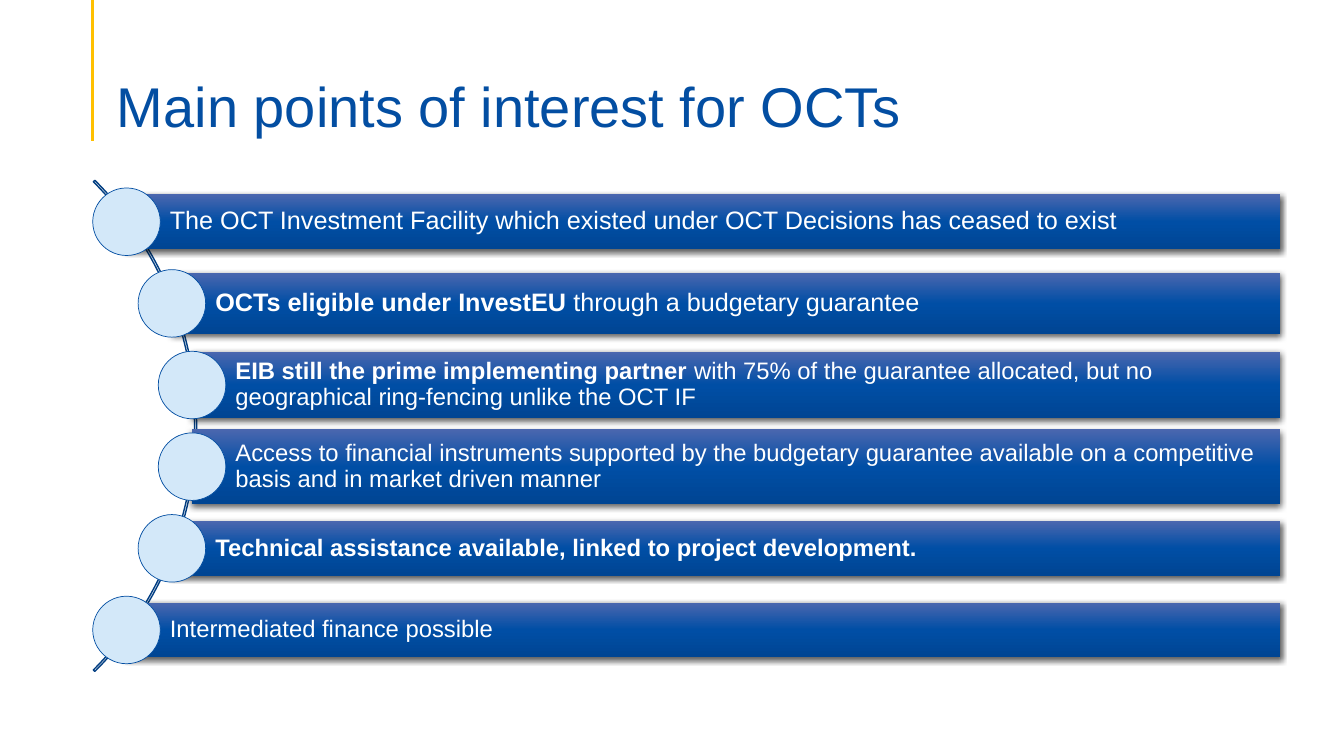
"""Build the slide on the main points of interest for OCTs."""
from copy import deepcopy

from pptx import Presentation
from pptx.dml.color import RGBColor
from pptx.enum.shapes import MSO_CONNECTOR, MSO_SHAPE
from pptx.enum.text import MSO_ANCHOR, MSO_AUTO_SIZE, PP_ALIGN
from pptx.oxml import parse_xml
from pptx.oxml.ns import nsdecls, qn
from pptx.util import Inches, Pt

BLUE = RGBColor(0x03, 0x4E, 0xA2)
ARC_BLUE = RGBColor(0x02, 0x3E, 0x82)
PALE_BLUE = RGBColor(0xD3, 0xE8, 0xF9)
GOLD = RGBColor(0xFF, 0xC0, 0x00)
WHITE = RGBColor(0xFF, 0xFF, 0xFF)
BAR_STOPS = [
    (0, RGBColor(0x4B, 0x67, 0xAF)),
    (0.5, RGBColor(0x00, 0x4E, 0xA5)),
    (1, RGBColor(0x00, 0x45, 0x93)),
]
BAR_SHADOW = (
    f'<a:outerShdw {nsdecls("a")} blurRad="57150" dist="19050" dir="5400000" '
    'algn="ctr" rotWithShape="0"><a:srgbClr val="000000">'
    '<a:alpha val="63000"/></a:srgbClr></a:outerShdw>'
)
DIAMETER = 0.67
BAR_RIGHT = 12.7
FIRST_CENTRE = 2.2
ROW_STEP = 0.81

# circle left, bar height, text size, bold text, regular text
POINTS = [
    (0.92, 0.54, 18, "", "The OCT Investment Facility which existed under OCT Decisions has ceased to exist"),
    (1.37, 0.61, 18, "OCTs eligible under InvestEU ", "through a budgetary guarantee"),
    (1.57, 0.66, 17, "EIB still the prime implementing partner ",
     "with 75% of the guarantee allocated, but no geographical ring-fencing unlike the OCT IF"),
    (1.57, 0.74, 17, "", "Access to financial instruments supported by the budgetary guarantee "
     "available on a competitive basis and in market driven manner"),
    (1.37, 0.54, 17, "Technical assistance available, linked to project development.", ""),
    (0.92, 0.54, 17, "", "Intermediated finance possible"),
]


def format_text(frame, runs, size, color, settings):
    for name, value in settings.items():
        setattr(frame, name, value)
    paragraph = frame.paragraphs[0]
    paragraph.alignment = PP_ALIGN.LEFT
    paragraph.line_spacing = 0.9
    for text, bold in runs:
        if text:
            run = paragraph.add_run()
            run.text = text
            run.font.color.rgb = color
            for name, value in {"name": "Arial", "size": Pt(size), "bold": bold}.items():
                setattr(run.font, name, value)


def add_outlined(shapes, kind, box, line_color, line_width):
    shape = shapes.add_shape(kind, *[Inches(length) for length in box])
    shape.shadow.inherit = False
    shape.line.color.rgb = line_color
    shape.line.width = Pt(line_width)
    return shape


presentation = Presentation()
presentation.slide_width = Inches(13.33)
presentation.slide_height = Inches(7.5)
slide = presentation.slides.add_slide(presentation.slide_layouts[5])
shapes = slide.shapes

title = shapes.title
title_box = {"left": 1.06, "top": 0.53, "width": 11.5, "height": 0.86}
for name, value in title_box.items():
    setattr(title, name, Inches(value))
format_text(title.text_frame, [("Main points of interest for OCTs", False)], 40, BLUE, {
    "auto_size": MSO_AUTO_SIZE.NONE, "word_wrap": True,
    "vertical_anchor": MSO_ANCHOR.BOTTOM,
    "margin_left": Inches(0.1), "margin_right": Inches(0.1),
    "margin_top": Inches(0.05), "margin_bottom": 0,
})

title_rule = shapes.add_connector(
    MSO_CONNECTOR.STRAIGHT, Inches(0.92), 0, Inches(0.92), Inches(1.4))
title_rule.line.color.rgb = GOLD
title_rule.line.width = Pt(2.25)
title_rule._element.spPr.append(parse_xml(f'<a:effectLst {nsdecls("a")}/>'))

arc = add_outlined(shapes, MSO_SHAPE.BLOCK_ARC, (-4.94, 0.78, 6.89, 6.89), ARC_BLUE, 1)
arc.fill.background()
for index, value in enumerate((189, 27, 0.003)):
    arc.adjustments[index] = value

for row, (circle_left, bar_height, size, bold_text, regular_text) in enumerate(POINTS):
    centre = FIRST_CENTRE + row * ROW_STEP
    bar_left = circle_left + DIAMETER / 2
    bar = shapes.add_shape(
        MSO_SHAPE.RECTANGLE, Inches(bar_left), Inches(centre - bar_height / 2),
        Inches(BAR_RIGHT - bar_left), Inches(bar_height))
    bar.line.fill.background()
    bar.fill.gradient()
    bar.fill.gradient_angle = 270
    stop_list = bar._element.spPr.find(".//" + qn("a:gsLst"))
    stop_list.insert(1, deepcopy(stop_list[0]))
    for stop, (position, color) in zip(bar.fill.gradient_stops, BAR_STOPS):
        stop.position = position
        stop.color.rgb = color
    bar.shadow.inherit = False
    bar._element.spPr.find(qn("a:effectLst")).append(parse_xml(BAR_SHADOW))
    format_text(bar.text_frame, [(bold_text, True), (regular_text, False)], size, WHITE, {
        "word_wrap": True, "vertical_anchor": MSO_ANCHOR.MIDDLE,
        "margin_left": Inches(0.43), "margin_right": Inches(0.05),
        "margin_top": Inches(0.05), "margin_bottom": Inches(0.05),
    })

    circle = add_outlined(
        shapes, MSO_SHAPE.OVAL,
        (circle_left, centre - DIAMETER / 2, DIAMETER, DIAMETER), BLUE, 0.5)
    circle.fill.solid()
    circle.fill.fore_color.rgb = PALE_BLUE

presentation.save("out.pptx")
